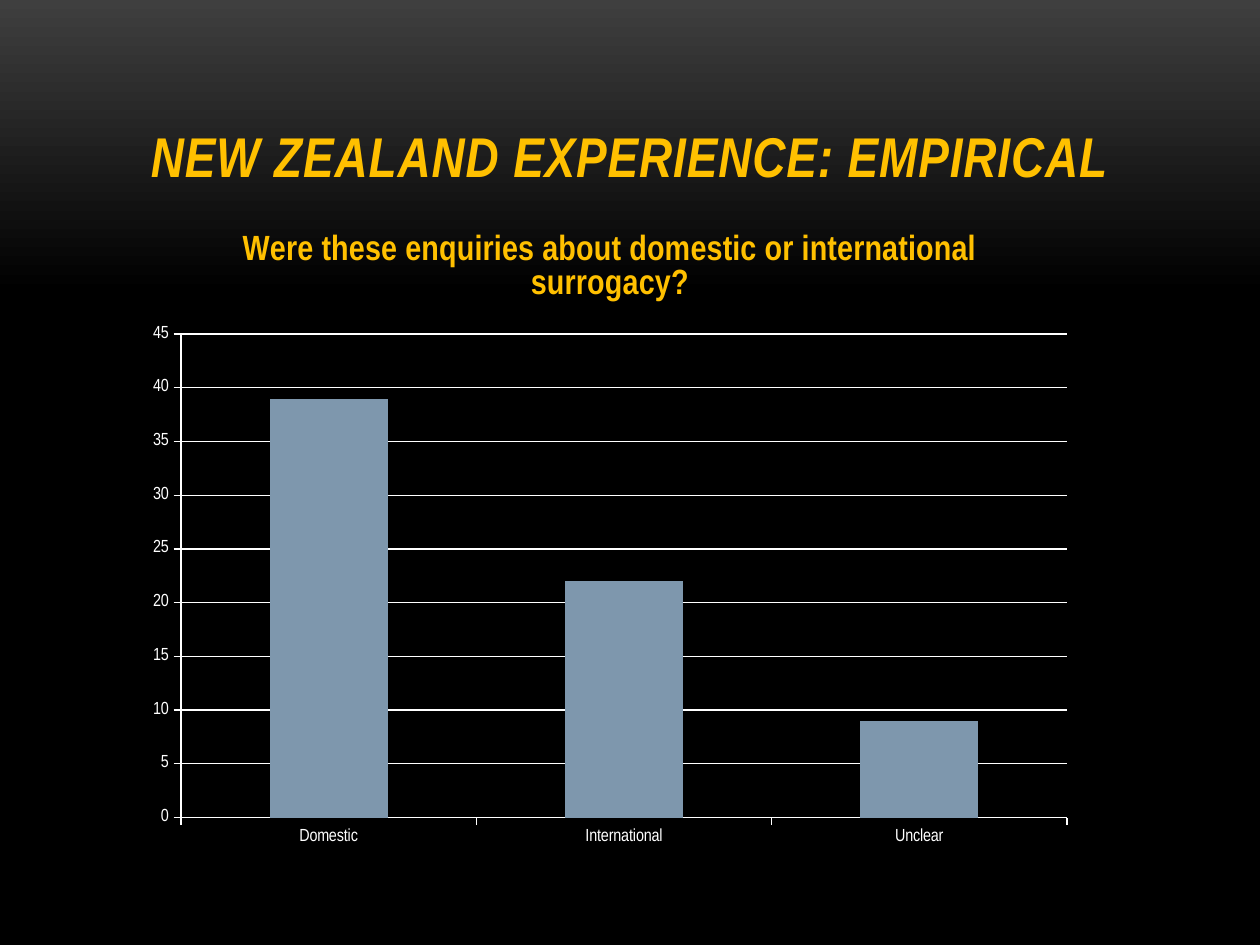
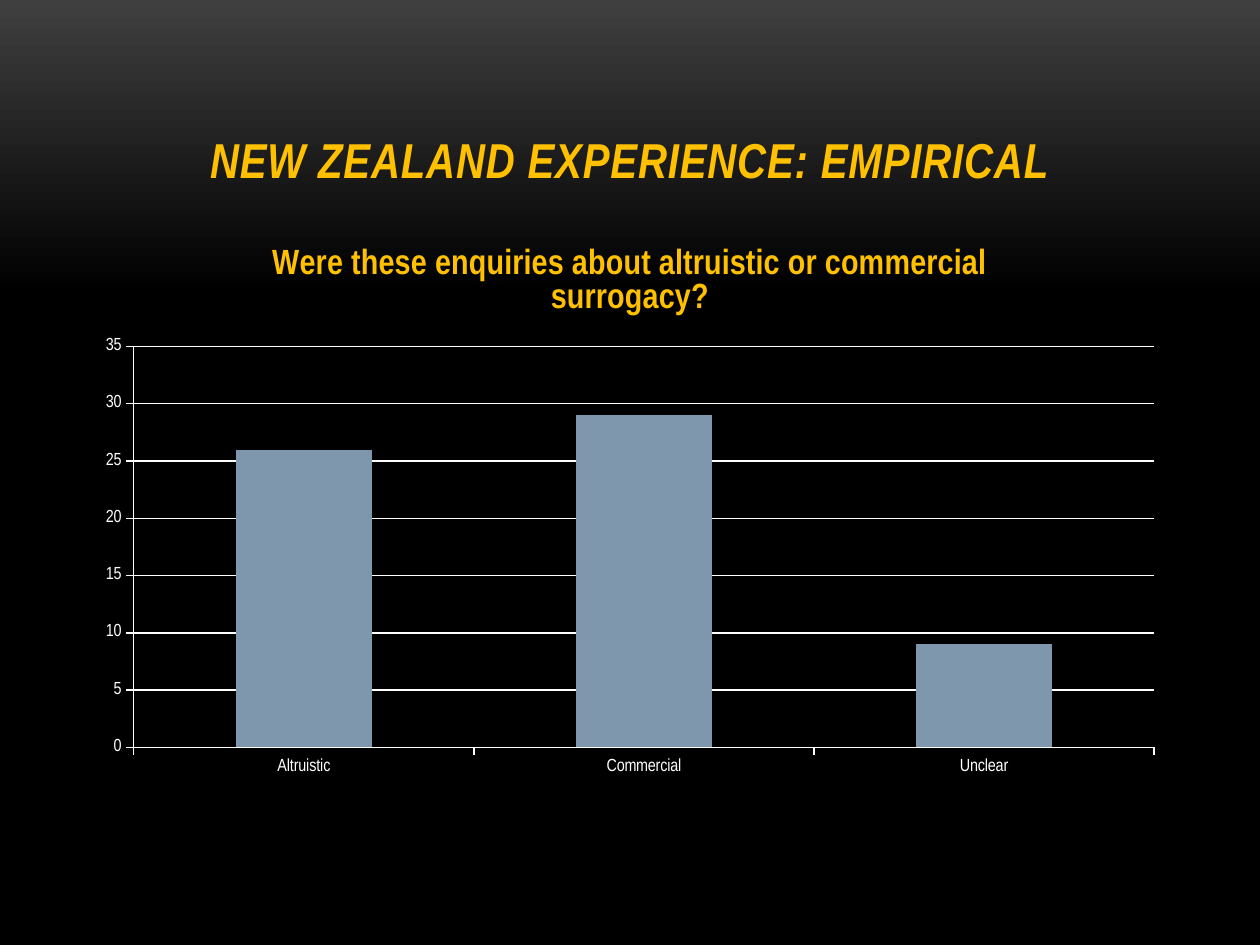
from pptx import Presentation
from pptx.chart.data import CategoryChartData
from pptx.dml.color import RGBColor
from pptx.enum.chart import XL_CHART_TYPE, XL_TICK_MARK
from pptx.enum.text import MSO_ANCHOR, MSO_AUTO_SIZE, PP_ALIGN
from pptx.util import Pt

COLUMNS = XL_CHART_TYPE.COLUMN_CLUSTERED
TICK_OUT, TICK_NONE = XL_TICK_MARK.OUTSIDE, XL_TICK_MARK.NONE
BOTTOM, CENTER = MSO_ANCHOR.BOTTOM, PP_ALIGN.CENTER
NO_FIT = MSO_AUTO_SIZE.NONE

FONT = "Arial Narrow"
GOLD, WHITE, BLACK = "FFC000", "FFFFFF", "000000"
CHARCOAL, STEEL = "3F3F3F", "7E97AD"
TITLE = "NEW ZEALAND EXPERIENCE: EMPIRICAL"
TITLE_BOX = (84, 38, 1092, 157)
EMU_PER_PX = 914400 / 126


def px(n):
    return round(n * EMU_PER_PX)


def rgb(color):
    return RGBColor.from_string(color)


def style_font(font, size, color, bold=False, italic=False):
    font.name = FONT
    font.size = Pt(size)
    font.color.rgb = rgb(color)
    font.bold = bold
    font.italic = italic


def style_line(line, color):
    line.color.rgb = rgb(color)
    line.width = Pt(0.75)


def set_background(master):
    fill = master.background.fill
    fill.gradient()
    fill.gradient_angle = 270
    stops = ((CHARCOAL, 0), (BLACK, 0.31))
    for stop, (color, position) in zip(fill.gradient_stops, stops):
        stop.color.rgb = rgb(color)
        stop.position = position


def add_title(s, text, size):
    sp = s.shapes.title
    sp.left, sp.top, sp.width, sp.height = map(px, TITLE_BOX)
    tf = sp.text_frame
    tf.word_wrap = True
    tf.auto_size = NO_FIT
    tf.vertical_anchor = BOTTOM
    p = tf.paragraphs[0]
    p.alignment = CENTER
    r = p.add_run()
    r.text = text
    style_font(r.font, size, GOLD, bold=True, italic=True)
    r.font._element.set("spc", "50")


def add_chart_title(chart, text):
    chart.has_title = True
    chart.chart_title.include_in_layout = False
    r = chart.chart_title.text_frame.paragraphs[0].add_run()
    r.text = text
    style_font(r.font, 20, GOLD, bold=True)


def add_column_chart(s, box, question, counts):
    data = CategoryChartData()
    data.categories = list(counts)
    data.add_series("Series 1", list(counts.values()))
    chart = s.shapes.add_chart(COLUMNS, *map(px, box), data).chart
    style_font(chart.font, 10, WHITE)
    chart.has_legend = False
    add_chart_title(chart, question)

    plot = chart.plots[0]
    plot.gap_width = 150
    plot.vary_by_categories = False
    fill = plot.series[0].format.fill
    fill.solid()
    fill.fore_color.rgb = rgb(STEEL)

    for axis in (chart.category_axis, chart.value_axis):
        axis.major_tick_mark = TICK_OUT
        axis.minor_tick_mark = TICK_NONE
        style_line(axis.format.line, WHITE)
    chart.value_axis.has_major_gridlines = True
    style_line(chart.value_axis.major_gridlines.format.line, WHITE)


def add_survey_slide(prs, title_size, chart_box, question, counts):
    s = prs.slides.add_slide(prs.slide_layouts[5])
    add_title(s, TITLE, title_size)
    add_column_chart(s, chart_box, question, counts)


def main():
    prs = Presentation()
    prs.slide_width, prs.slide_height = px(1260), px(945)
    set_background(prs.slide_master)
    add_survey_slide(
        prs, 32, (134, 204, 952, 655),
        "Were these enquiries about domestic or international surrogacy?",
        {"Domestic": 39, "International": 22, "Unclear": 9})
    add_survey_slide(
        prs, 28, (84, 220, 1092, 567),
        "Were these enquiries about altruistic or commercial surrogacy?",
        {"Altruistic": 26, "Commercial": 29, "Unclear": 9})
    prs.save("out.pptx")


if __name__ == "__main__":
    main()
